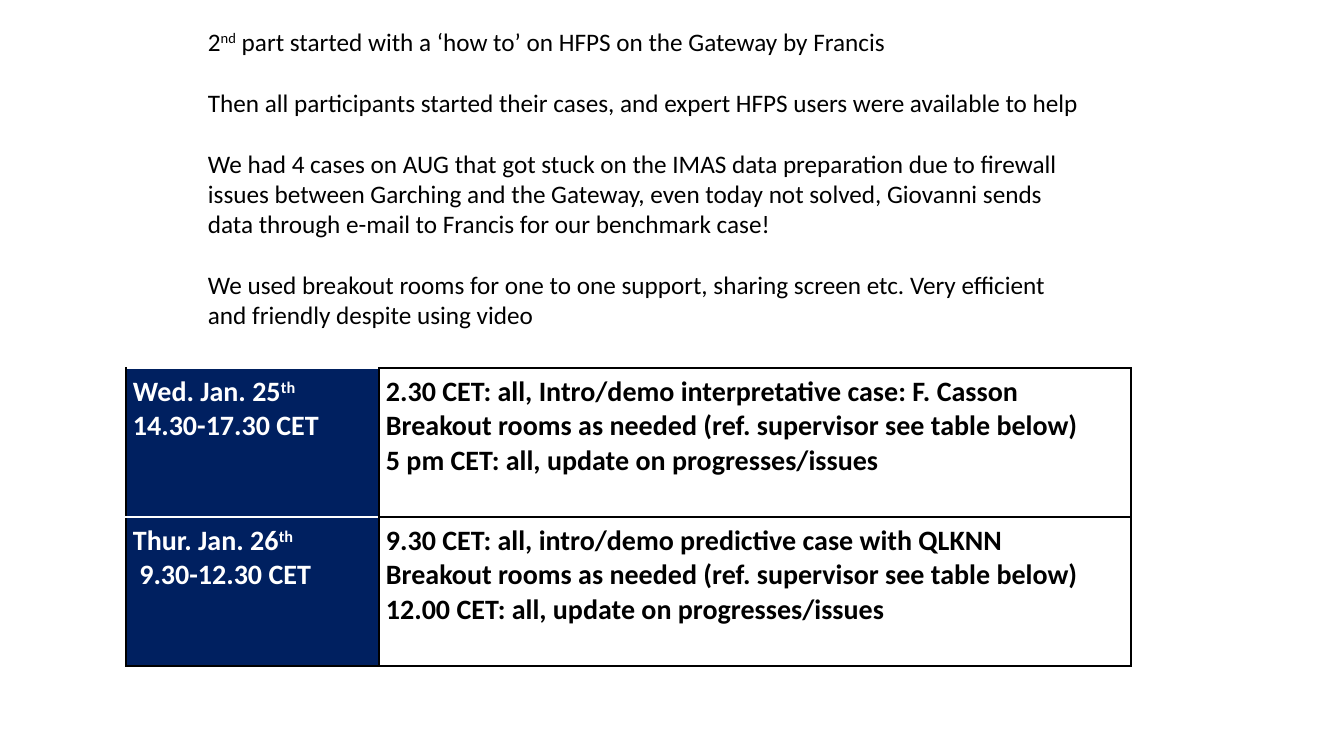
"""Build the slide on the second part of the training, with its timetable."""
from lxml.etree import fromstring
from pptx import Presentation
from pptx.dml.color import RGBColor
from pptx.enum.text import MSO_ANCHOR, PP_ALIGN
from pptx.oxml.ns import nsdecls
from pptx.util import Emu, Pt

WHITE, BLACK, NAVY = "FFFFFF", "000000", "002060"
NOTES = [
    "2^nd^ part started with a ‘how to’ on HFPS on the Gateway by Francis",
    "Then all participants started their cases, and expert HFPS users were available to help",
    "We had 4 cases on AUG that got stuck on the IMAS data preparation due to firewall "
    "issues between Garching and the Gateway, even today not solved, Giovanni sends "
    "data through e-mail to Francis for our benchmark case!",
    "We used breakout rooms for one to one support, sharing screen etc. Very efficient "
    "and friendly despite using video",
]
ROOMS = "Breakout rooms as needed (ref. supervisor see table below)"
ROWS = [
    (["Wed. Jan. 25^th^", "14.30-17.30 CET"],
     ["2.30 CET: all, Intro/demo interpretative case: F. Casson", ROOMS,
      "5 pm CET: all, update on progresses/issues"]),
    (["Thur. Jan. 26^th^", " 9.30-12.30 CET"],
     ["9.30 CET: all, intro/demo predictive case with QLKNN", ROOMS,
      "12.00 CET: all, update on progresses/issues"]),
]
NOTE_BOX = (198, 21, 895, 316)
LEFT, TOP, HIGH, PAD = 126, 368, 149, 7
WIDTHS = (253, 752)


def px(size):
    return Emu(round(size * 914400 / 100.8))


def tint(code):
    return RGBColor.from_string(code)


def write(frame, lines, size=18, color=BLACK, bold=False, gap=0):
    """Fill a frame with paragraphs, raising the parts between carets."""
    frame.word_wrap = True
    for i, line in enumerate(lines):
        para = frame.add_paragraph() if i else frame.paragraphs[0]
        para.alignment = PP_ALIGN.LEFT
        para.space_before = Pt(gap if i else 0)
        for j, part in enumerate(line.split("^")):
            if not part:
                continue
            run = para.add_run()
            run.text = part
            font = run.font
            font.name, font.size, font.bold = "Calibri", Pt(size), bold
            font.color.rgb = tint(color)
            if j % 2:
                run._r.get_or_add_rPr().set("baseline", "30000")


def edge(cell, colors):
    """Draw the left, right, top and bottom borders of a cell."""
    props = cell._tc.get_or_add_tcPr()
    for i, (side, color) in enumerate(zip("LRTB", colors)):
        props.insert(i, fromstring(
            f'<a:ln{side} {nsdecls("a")} w="12700"><a:solidFill>'
            f'<a:srgbClr val="{color}"/></a:solidFill></a:ln{side}>'))


def main():
    """Place the notes and the timetable, then save."""
    deck = Presentation()
    deck.slide_width, deck.slide_height = px(1344), px(756)
    slide = deck.slides.add_slide(deck.slide_layouts[6])
    box = slide.shapes.add_textbox(*map(px, NOTE_BOX))
    write(box.text_frame, NOTES, gap=22)

    place = (LEFT, TOP, sum(WIDTHS), HIGH * len(ROWS))
    table = slide.shapes.add_table(len(ROWS), len(WIDTHS), *map(px, place)).table
    table.first_row = table.horz_banding = False
    for col, wide in zip(table.columns, WIDTHS):
        col.width = px(wide)
    for r, row in enumerate(ROWS):
        table.rows[r].height = px(HIGH)
        for c, lines in enumerate(row):
            cell = table.cell(r, c)
            date = c == 0
            cell.margin_left = cell.margin_right = px(PAD)
            cell.margin_top = cell.margin_bottom = px(PAD)
            cell.vertical_anchor = MSO_ANCHOR.TOP
            cell.fill.solid()
            cell.fill.fore_color.rgb = tint(NAVY if date else WHITE)
            write(cell.text_frame, lines, size=20, bold=True,
                  color=WHITE if date else BLACK)
            last = r == len(ROWS) - 1
            edge(cell, (BLACK, BLACK, WHITE if date else BLACK,
                        WHITE if date and not last else BLACK))
    deck.save("out.pptx")


if __name__ == "__main__":
    main()
